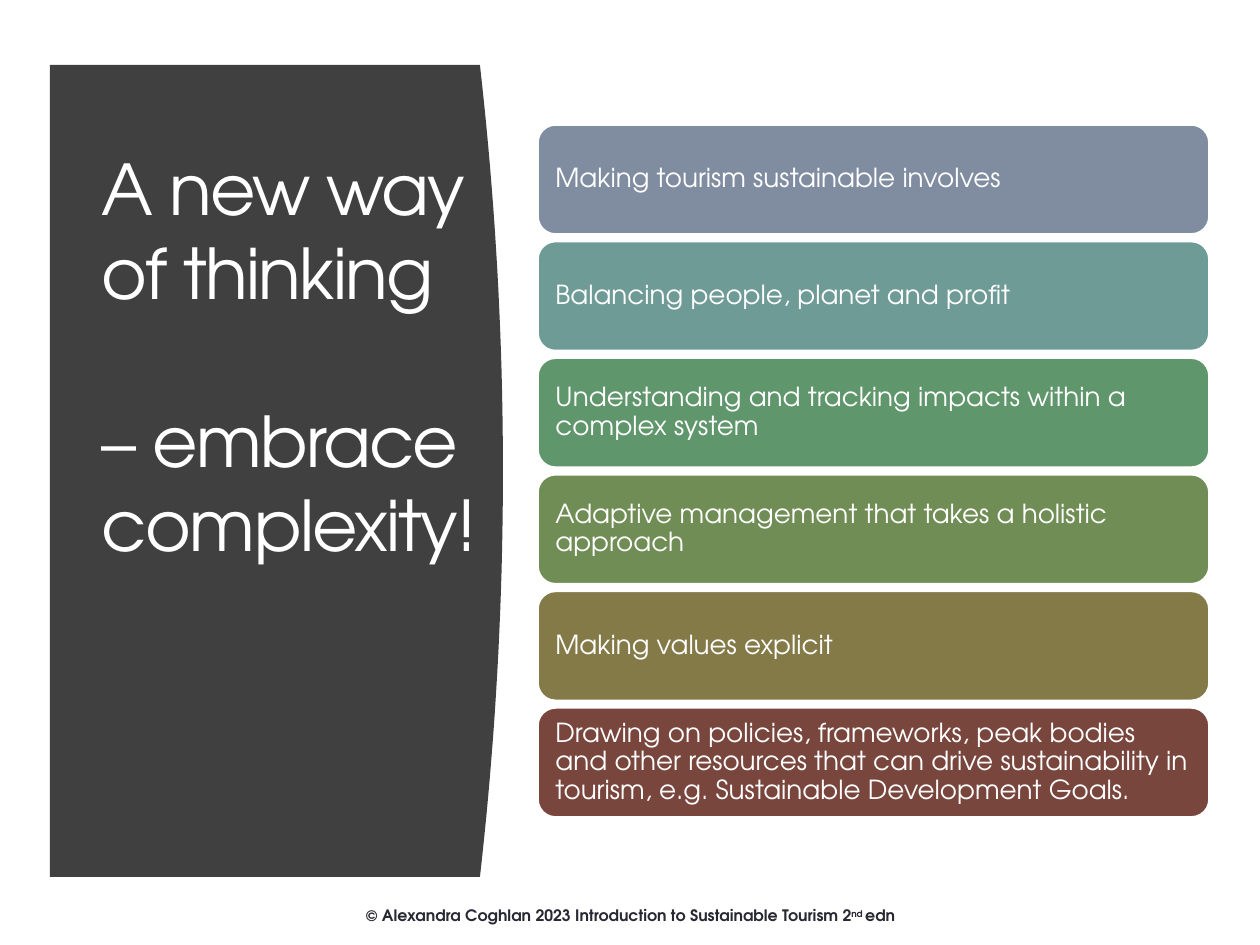
from pptx import Presentation
from pptx.dml.color import RGBColor
from pptx.enum.shapes import MSO_SHAPE
from pptx.enum.text import MSO_ANCHOR, PP_ALIGN
from pptx.util import Pt

PX = 914400 / 126
FONT = "TeX Gyre Adventor"
ROUNDED = MSO_SHAPE.ROUNDED_RECTANGLE
TOP, MIDDLE = MSO_ANCHOR.TOP, MSO_ANCHOR.MIDDLE
LEFT, CENTER = PP_ALIGN.LEFT, PP_ALIGN.CENTER

CARDS = [
    ("808DA0", "Making tourism sustainable involves"),
    ("6F9B97", "Balancing people, planet and profit"),
    ("60966C", "Understanding and tracking impacts within a complex system"),
    ("6F8D54", "Adaptive management that takes a holistic approach"),
    ("837A48", "Making values explicit"),
    ("79463D", "Drawing on policies, frameworks, peak bodies and other resources "
               "that can drive sustainability in tourism, e.g. Sustainable "
               "Development Goals."),
]


def emu(px):
    """Turn px into EMU."""
    return round(px * PX)


def rgb(value):
    """Turn a hex string into a colour."""
    return RGBColor.from_string(value)


def set_frame(tf, anchor, inset_x, inset_y):
    """Set wrapping, anchor and insets of a text frame."""
    tf.word_wrap = True
    tf.vertical_anchor = anchor
    tf.margin_left = tf.margin_right = emu(inset_x)
    tf.margin_top = tf.margin_bottom = emu(inset_y)


def add_run(p, text, size, color, bold=False, **attrs):
    """Add a styled run, with extra run properties if given."""
    r = p.add_run()
    r.text = text
    r.font.name = FONT
    r.font.size = Pt(size)
    r.font.bold = bold
    r.font.color.rgb = rgb(color)
    for name, value in attrs.items():
        r.font._element.set(name, value)


def add_panel(s, x, y, w, h, bulge=23, steps=40):
    """Draw the dark panel whose right edge bows outwards."""
    edge = []
    for i in range(steps + 1):
        t = i / steps
        edge.append((emu(x + w - bulge * (2 * t - 1) ** 2), emu(y + h * t)))
    fb = s.shapes.build_freeform(emu(x), emu(y))
    fb.add_line_segments(edge + [(emu(x), emu(y + h))], close=True)
    sp = fb.convert_to_shape()
    sp.shadow.inherit = False
    sp.fill.solid()
    sp.fill.fore_color.rgb = rgb("404040")
    sp.line.fill.background()


def add_title(s, x, y, w, h):
    """Write the title on the panel."""
    tf = s.shapes.add_textbox(emu(x), emu(y), emu(w), emu(h)).text_frame
    set_frame(tf, TOP, 13, 6)
    p = tf.paragraphs[0]
    add_run(p, "A new way of thinking", 40, "FFFFFF", spc="-100")
    for size in (40, 40):
        p.add_line_break()
    add_run(p, "– embrace complexity!", 40, "FFFFFF", spc="-100")
    p.font.size = Pt(size)


def add_cards(s, x, y, w, h, card_h=111):
    """Stack the cards evenly within the box."""
    pitch = (h - card_h) / (len(CARDS) - 1)
    for i, (color, text) in enumerate(CARDS):
        sp = s.shapes.add_shape(ROUNDED, emu(x), emu(y + i * pitch),
                                emu(w), emu(card_h))
        sp.shadow.inherit = False
        sp.fill.solid()
        sp.fill.fore_color.rgb = rgb(color)
        sp.line.color.rgb = rgb("FFFFFF")
        sp.line.width = Pt(2.08)
        set_frame(sp.text_frame, MIDDLE, 13, 6)
        p = sp.text_frame.paragraphs[0]
        p.alignment = LEFT
        p.line_spacing = 0.9
        add_run(p, text, 15, "FFFFFF")


def add_footer(s, x, y, w, h):
    """Write the centred copyright line."""
    tf = s.shapes.add_textbox(emu(x), emu(y), emu(w), emu(h)).text_frame
    set_frame(tf, TOP, 13, 6)
    p = tf.paragraphs[0]
    p.alignment = CENTER
    ink = "292934"
    add_run(p, "© Alexandra Coghlan 2023 Introduction to Sustainable Tourism 2",
            9, ink, True)
    add_run(p, "nd ", 9, ink, True, baseline="30000")
    add_run(p, "edn", 9, ink, True)


def main():
    """Build and save the slide."""
    prs = Presentation()
    prs.slide_width, prs.slide_height = emu(1260), emu(945)
    s = prs.slides.add_slide(prs.slide_layouts[6])
    add_footer(s, 333, 900, 595, 31)
    add_panel(s, 50, 65, 453, 812)
    add_title(s, 89, 140, 402, 660)
    add_cards(s, 537, 124, 673, 694)
    prs.save("out.pptx")


if __name__ == "__main__":
    main()
